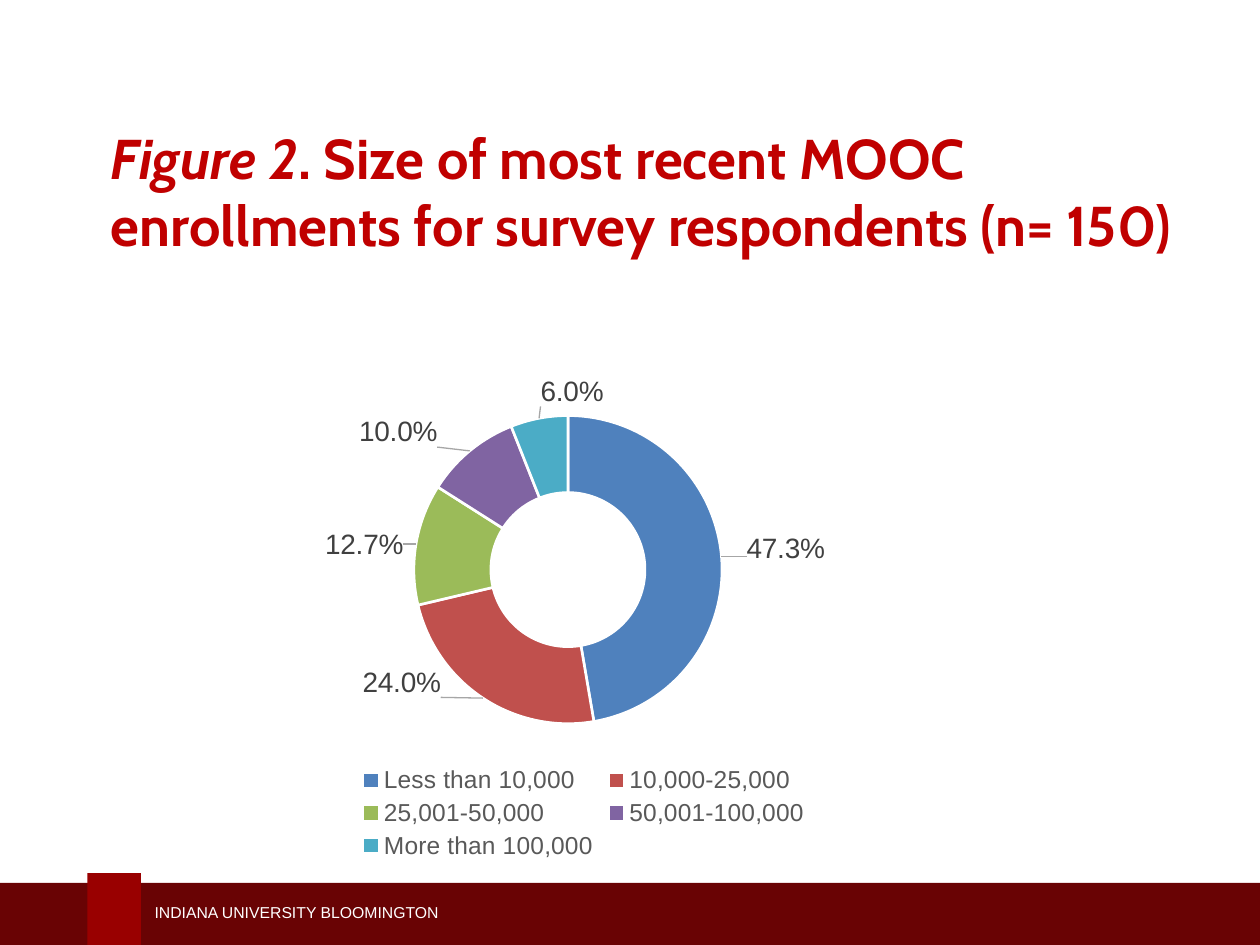
"""Build a slide with a doughnut chart of MOOC enrollment sizes."""
from dataclasses import dataclass

from lxml import etree
from pptx import Presentation
from pptx.chart.data import CategoryChartData
from pptx.dml.color import RGBColor
from pptx.enum import chart as charts, shapes, text
from pptx.oxml import parse_xml
from pptx.oxml.ns import nsdecls, qn
from pptx.util import Pt


@dataclass(frozen=True)
class Theme:
    """Colours, fonts and type sizes."""
    title: str = "C00000"
    band: str = "690304"
    tab: str = "990000"
    white: str = "FFFFFF"
    label: str = "404040"
    legend: str = "595959"
    leader: str = "A6A6A6"
    slices: tuple = ("4F81BD", "C0504D", "9BBB59", "8064A2", "4BACC6")
    heading_font: str = "Cabin"
    body_font: str = "Arial"
    title_size: int = 32
    label_size: int = 16
    legend_size: int = 14
    chart_size: int = 10
    footer_size: int = 9


class SlideBuilder:
    """Hold the theme and the current slide."""

    def __init__(self, page, theme):
        self.page = page
        self.theme = theme

    def style(self, font, name, size, color):
        """Set the typeface, size and colour of a font."""
        font.name = name
        font.size = Pt(size)
        font.color.rgb = RGBColor.from_string(color)

    def place(self, box, left, top, width, height):
        """Move and size a shape, in points."""
        box.left, box.top = Pt(left), Pt(top)
        box.width, box.height = Pt(width), Pt(height)

    def title(self, spans, *bounds):
        """Fill the title placeholder with (text, italic) spans."""
        box = self.page.shapes.title
        self.place(box, *bounds)
        frame = box.text_frame
        frame.word_wrap = True
        frame.auto_size = text.MSO_AUTO_SIZE.NONE
        frame.vertical_anchor = text.MSO_ANCHOR.MIDDLE
        para = frame.paragraphs[0]
        para.alignment = text.PP_ALIGN.LEFT
        for words, italic in spans:
            span = para.add_run()
            span.text = words
            self.style(span.font, self.theme.heading_font, self.theme.title_size, self.theme.title)
            span.font.bold = True
            span.font.italic = italic

    def bar(self, color, *bounds):
        """Add a plain filled rectangle."""
        bar = self.page.shapes.add_shape(shapes.MSO_SHAPE.RECTANGLE, *map(Pt, bounds))
        bar.shadow.inherit = False
        bar.fill.solid()
        bar.fill.fore_color.rgb = RGBColor.from_string(color)
        bar.line.fill.background()

    def footer(self, words, *bounds):
        """Add the footer text."""
        frame = self.page.shapes.add_textbox(*map(Pt, bounds)).text_frame
        frame.word_wrap = True
        frame.vertical_anchor = text.MSO_ANCHOR.MIDDLE
        frame.text = words
        font = frame.paragraphs[0].runs[0].font
        self.style(font, self.theme.body_font, self.theme.footer_size, self.theme.white)

    def doughnut(self, rows, inner, *bounds):
        """Add a doughnut from (category, value, label offset) rows."""
        theme = self.theme
        data = CategoryChartData(number_format="0.0%")
        data.categories = [name for name, _, _ in rows]
        data.add_series("Series 1", [value for _, value, _ in rows])
        chart = self.page.shapes.add_chart(
            charts.XL_CHART_TYPE.DOUGHNUT, *map(Pt, bounds), data).chart
        chart.has_title = False
        self.style(chart.font, theme.body_font, theme.chart_size, "000000")
        chart.has_legend = True
        chart.legend.position = charts.XL_LEGEND_POSITION.BOTTOM
        chart.legend.include_in_layout = False
        self.style(chart.legend.font, theme.body_font, theme.legend_size, theme.legend)
        plot = chart.plots[0]
        plot.vary_by_categories = True
        series = plot.series[0]
        labels = series.data_labels
        labels.show_value = True
        labels.number_format = "0.0%"
        labels.number_format_is_linked = False
        self.style(labels.font, theme.body_font, theme.label_size, theme.label)
        for index, color in enumerate(theme.slices):
            point = series.points[index]
            point.format.fill.solid()
            point.format.fill.fore_color.rgb = RGBColor.from_string(color)
            point.format.line.color.rgb = RGBColor.from_string(theme.white)
            point.format.line.width = Pt(1.5)
            self.style(point.data_label.font, theme.body_font, theme.label_size, theme.label)
        self.arrange(chart.element if hasattr(chart, "element") else chart._chartSpace,
                     [offset for _, _, offset in rows], inner)

    def layout(self, **values):
        """Return a manual chart layout."""
        layout = parse_xml(f"<c:layout {nsdecls('c')}><c:manualLayout/></c:layout>")
        for name, value in values.items():
            etree.SubElement(layout[0], qn(f"c:{name}")).set("val", str(value))
        return layout

    def arrange(self, root, offsets, inner):
        """Place the ring and its labels, with leader lines."""
        area = root.find(".//" + qn("c:plotArea"))
        for old in area.findall(qn("c:layout")):
            area.remove(old)
        left, top, width, height = inner
        area.insert(0, self.layout(layoutTarget="inner", xMode="edge", yMode="edge",
                                   x=left, y=top, w=width, h=height))
        area.find(".//" + qn("c:holeSize")).set("val", "75")
        labels = area.find(".//" + qn("c:ser")).find(qn("c:dLbls"))
        for label, (x, y) in zip(labels.findall(qn("c:dLbl")), offsets):
            label.insert(1, self.layout(x=x, y=y))
            label.insert(2, parse_xml(
                f'<c:numFmt {nsdecls("c")} formatCode="0.0%" sourceLinked="0"/>'))
        for old in labels.findall(qn("c:showLeaderLines")):
            labels.remove(old)
        labels.append(parse_xml(f'<c:showLeaderLines {nsdecls("c")} val="1"/>'))
        labels.append(parse_xml(
            f'<c:leaderLines {nsdecls("c", "a")}><c:spPr><a:ln w="9525"><a:solidFill>'
            f'<a:srgbClr val="{self.theme.leader}"/></a:solidFill></a:ln></c:spPr>'
            '</c:leaderLines>'))


def main():
    """Create the deck and save it."""
    deck = Presentation()
    deck.slide_width, deck.slide_height = Pt(720), Pt(540)
    page = deck.slides.add_slide(deck.slide_layouts[0])
    subtitle = page.placeholders[1].element
    subtitle.getparent().remove(subtitle)
    theme = Theme()
    builder = SlideBuilder(page, theme)
    builder.bar(theme.band, -2, 504.5, 726, 36)
    builder.bar(theme.tab, 50, 499, 30.5, 41.5)
    builder.footer("INDIANA UNIVERSITY BLOOMINGTON", 81.2, 512, 284.4, 18)
    builder.title([("Figure 2", True),
                   (". Size of most recent MOOC enrollments for survey respondents (n= 150)", False)],
                  56.2, 45.4, 630, 127.4)
    rows = [("Less than 10,000", 0.473, (0.16, -0.02)),
            ("10,000-25,000", 0.24, (-0.16, 0.03)),
            ("25,001-50,000", 0.127, (-0.14, -0.01)),
            ("50,001-100,000", 0.1, (-0.15, -0.09)),
            ("More than 100,000", 0.06, (0.04, -0.12))]
    builder.doughnut(rows, (0.22, 0.17, 0.51, 0.57), 150.5, 185, 366.5, 309)
    deck.save("out.pptx")


if __name__ == "__main__":
    main()
